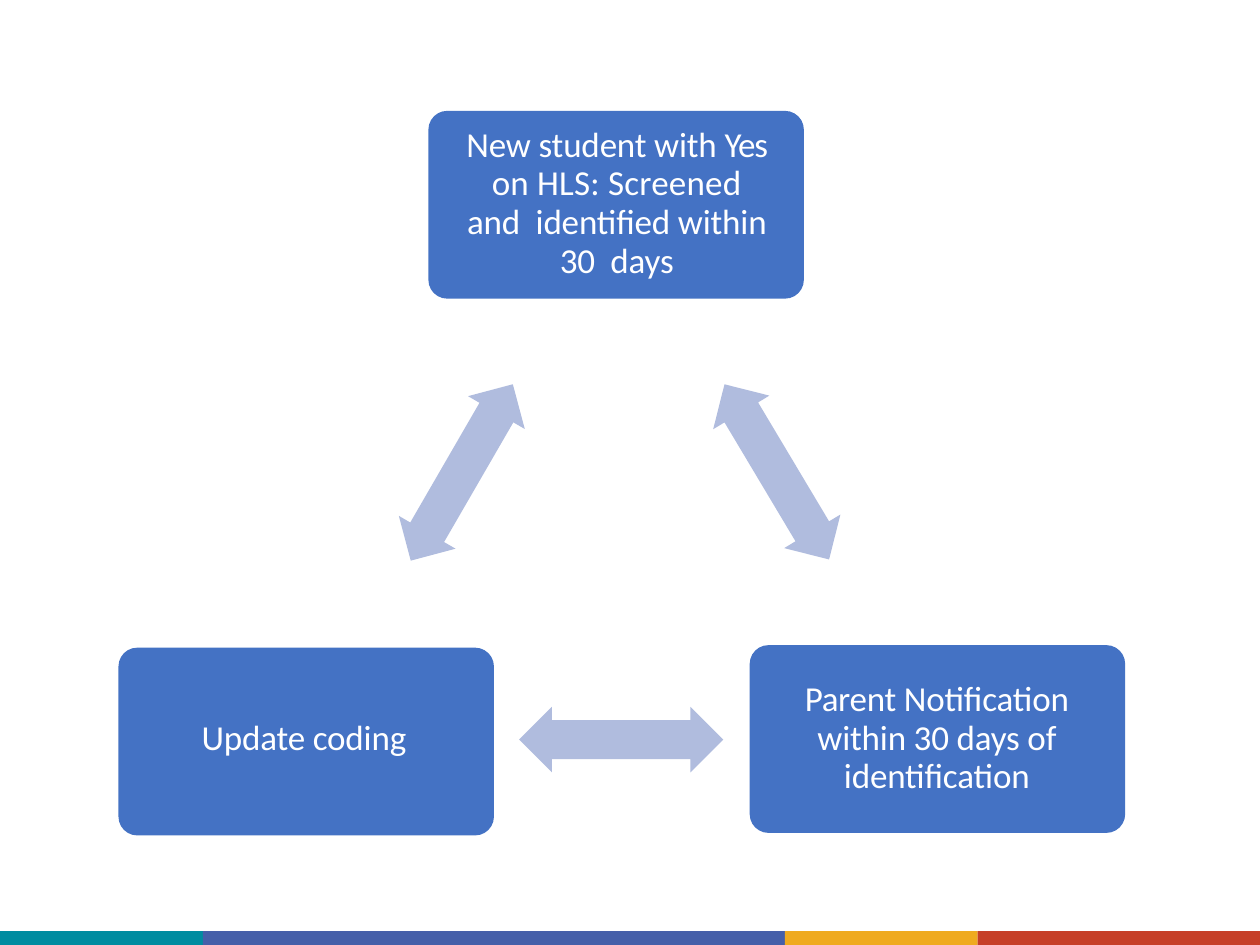
import math
import pptx
import pptx.util
import pptx.dml.color
import pptx.enum.shapes
import pptx.enum.text

Inches = pptx.util.Inches
Pt = pptx.util.Pt
SHAPE = pptx.enum.shapes.MSO_SHAPE
ALIGN = pptx.enum.text.PP_ALIGN

BLUE, PALE, WHITE = "4472C4", "B0BCDE", "FFFFFF"
BOX_W, BOX_H = 2.98, 1.49

# left, width, colour
BANDS = [(0, 1.61, "008CA0"), (1.61, 4.62, "455FA9"),
         (6.23, 1.53, "EFAA1F"), (7.76, 2.24, "C63F28")]

# tip, tip
ARROWS = [((5.75, 3.05), (6.58, 4.44)),
          ((4.07, 3.05), (3.26, 4.45)),
          ((4.12, 5.87), (5.74, 5.87))]


def color(code):
    return pptx.dml.color.RGBColor.from_string(code)


def paint(shape, code):
    shape.shadow.inherit = False
    shape.fill.solid()
    shape.fill.fore_color.rgb = color(code)
    shape.line.fill.background()


def add_band(slide, left, width, code):
    band = slide.shapes.add_shape(SHAPE.RECTANGLE, Inches(left), Inches(7.39),
                                  Inches(width), Inches(0.11))
    paint(band, code)


def add_box(slide, left, top):
    box = slide.shapes.add_shape(SHAPE.ROUNDED_RECTANGLE, Inches(left),
                                 Inches(top), Inches(BOX_W), Inches(BOX_H))
    box.adjustments[0] = 0.1
    paint(box, BLUE)
    return box


def add_arrow(slide, start, end):
    """Draw a block arrow with a head at both tips."""
    head, wing, shaft = 0.26, 0.26, 0.155
    span = math.dist(start, end)
    ux, uy = (end[0] - start[0]) / span, (end[1] - start[1]) / span
    side = [(0, 0), (head, wing), (head, shaft),
            (span - head, shaft), (span - head, wing), (span, 0)]
    back = [(along, -off) for along, off in side[-2:0:-1]]
    dots = [(Inches(start[0] + along * ux - off * uy),
             Inches(start[1] + along * uy + off * ux))
            for along, off in side + back]
    pen = slide.shapes.build_freeform(*dots[0])
    pen.add_line_segments(dots[1:], close=True)
    paint(pen.convert_to_shape(), PALE)


def place(shape, left, top, width, height):
    shape.left, shape.top = Inches(left), Inches(top)
    shape.width, shape.height = Inches(width), Inches(height)


def fill_text(shape, runs, align, pitch, anchor):
    """Write runs of (text, letter spacing in hundredths of a point)."""
    frame = shape.text_frame
    frame.word_wrap = True
    frame.auto_size = pptx.enum.text.MSO_AUTO_SIZE.NONE
    frame.vertical_anchor = anchor
    frame.margin_left = frame.margin_right = 0
    frame.margin_top = frame.margin_bottom = 0
    para = frame.paragraphs[0]
    para.alignment = align
    para.line_spacing = pitch
    para.space_before = Pt(0)
    for text, gap in runs:
        run = para.add_run()
        run.text = text
        run.font.name = "Calibri"
        run.font.size = Pt(20)
        run.font.color.rgb = color(WHITE)
        run.font._element.set("spc", str(gap))


def add_label(slide, spot, runs, align, pitch):
    label = slide.shapes.add_textbox(*(Inches(n) for n in spot))
    fill_text(label, runs, align, pitch, pptx.enum.text.MSO_ANCHOR.TOP)


def main():
    deck = pptx.Presentation()
    deck.slide_width, deck.slide_height = Inches(10), Inches(7.5)
    slide = deck.slides.add_slide(deck.slide_layouts[5])

    for band in BANDS:
        add_band(slide, *band)

    box = add_box(slide, 3.4, 0.88)
    title = slide.shapes.title
    box.element.addnext(title.element)
    place(title, 3.67, 0.99, 2.45, 1.25)
    fill_text(title, [("New student with ", -10), ("Yes ", -60),
                      ("on HLS: Screened ", 10),
                      ("and  identified within 30  days", -10)],
              ALIGN.CENTER, 0.92, pptx.enum.text.MSO_ANCHOR.MIDDLE)

    for start, end in ARROWS:
        add_arrow(slide, start, end)

    add_box(slide, 0.94, 5.14)
    add_label(slide, (1.6, 5.68, 1.67, 0.36), [("Update coding", -10)],
              ALIGN.LEFT, 1.0)
    add_box(slide, 5.95, 5.12)
    add_label(slide, (6.36, 5.4, 2.15, 0.94),
              [("Parent ", -20),
               ("Notification within 30 days of identification", -10)],
              ALIGN.CENTER, Pt(22))

    deck.save("out.pptx")


if __name__ == "__main__":
    main()
